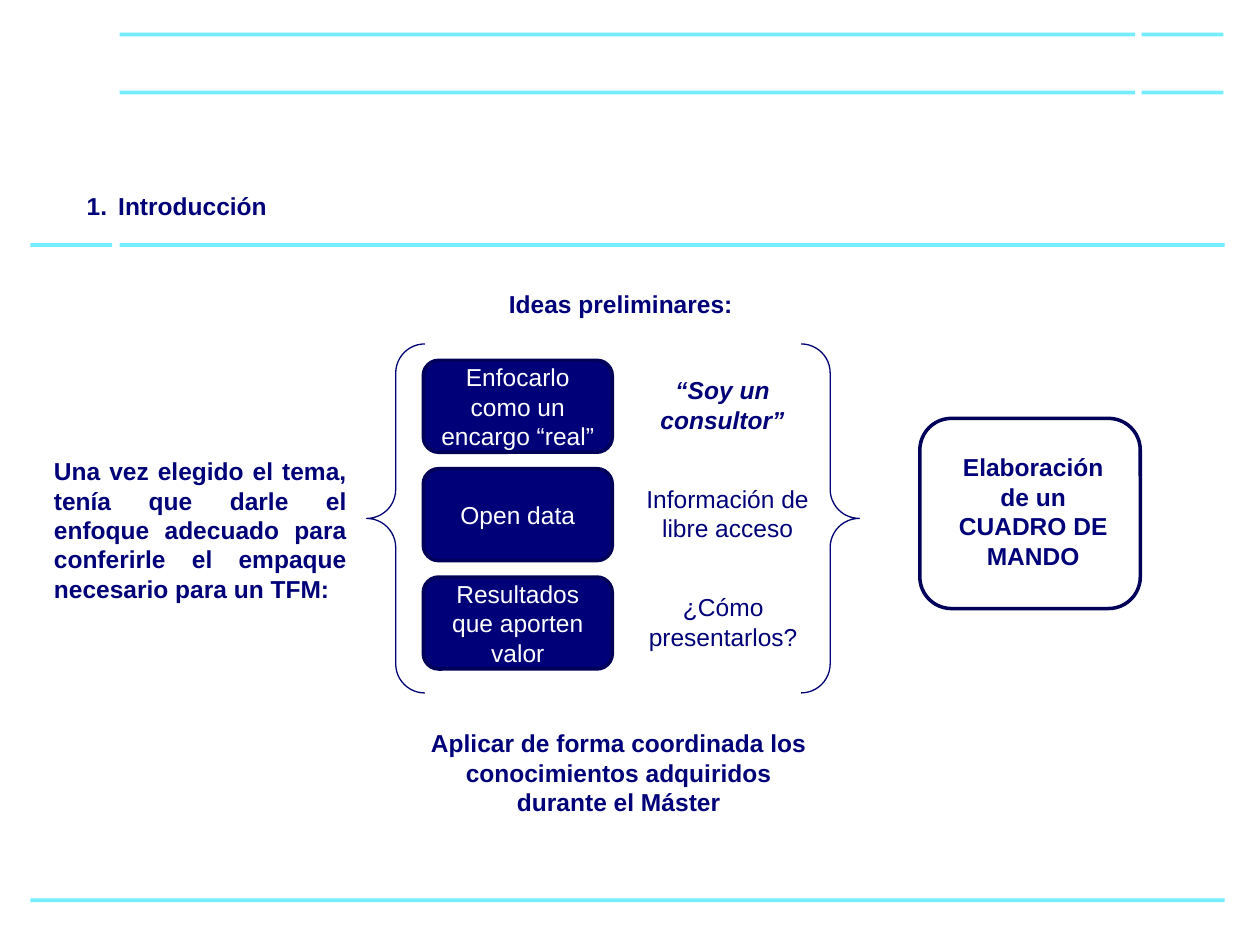
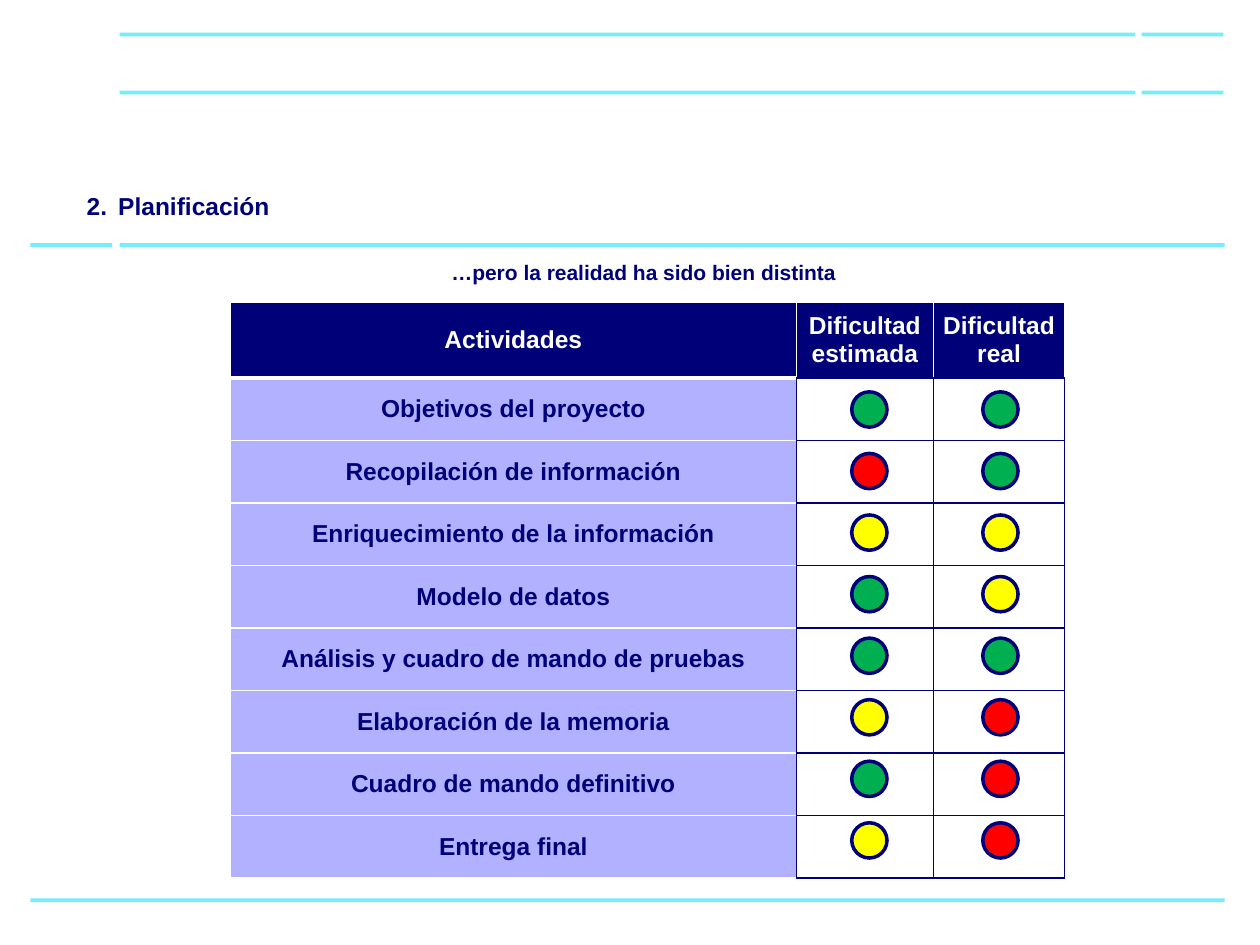
from typing import NamedTuple

from lxml import etree
from pptx import Presentation
from pptx.dml.color import RGBColor
from pptx.enum.shapes import MSO_SHAPE
from pptx.enum.text import MSO_ANCHOR, PP_ALIGN
from pptx.oxml.ns import qn
from pptx.util import Inches, Pt

RECTANGLE, ROUNDED = MSO_SHAPE.RECTANGLE, MSO_SHAPE.ROUNDED_RECTANGLE
BRACES, OVAL = MSO_SHAPE.DOUBLE_BRACE, MSO_SHAPE.OVAL
LEFT, CENTER, JUSTIFY = PP_ALIGN.LEFT, PP_ALIGN.CENTER, PP_ALIGN.JUSTIFY
TOP, MIDDLE = MSO_ANCHOR.TOP, MSO_ANCHOR.MIDDLE

FONT = "Arial"
COLORS = {
    "navy": "000078", "dark": "000059", "brace": "000075", "band": "73EDFF",
    "lavender": "B1B1FF", "white": "FFFFFF",
    "green": "00B050", "yellow": "FFFF00", "red": "FF0000",
}


class Box(NamedTuple):
    left: float
    top: float
    width: float
    height: float


class Idea(NamedTuple):
    name: str
    remark: str
    remark_left: float
    remark_width: float
    emphasis: bool = False


class Activity(NamedTuple):
    name: str
    estimated: str
    real: str


BANDS = [Box(left, top, width, 0.03)
         for left, width in ((0.95, 8.06), (9.06, 0.65)) for top in (0.26, 0.72)]
BANDS += [Box(0.24, 1.93, 0.65, 0.03), Box(0.95, 1.93, 8.77, 0.03),
          Box(0.24, 7.13, 9.48, 0.03)]

IDEAS = [
    Idea("Enfocarlo como un encargo “real”", "“Soy un consultor”", 5.05, 1.37, True),
    Idea("Open data", "Información de libre acceso", 4.89, 1.77),
    Idea("Resultados que aporten valor", "¿Cómo presentarlos?", 4.99, 1.5),
]

HEADERS = ["Actividades", "Dificultad\nestimada", "Dificultad\nreal"]
ACTIVITIES = [
    Activity("Objetivos del proyecto", "green", "green"),
    Activity("Recopilación de información", "red", "green"),
    Activity("Enriquecimiento de la información", "yellow", "yellow"),
    Activity("Modelo de datos", "green", "yellow"),
    Activity("Análisis y cuadro de mando de pruebas", "green", "green"),
    Activity("Elaboración de la memoria", "yellow", "red"),
    Activity("Cuadro de mando definitivo", "green", "red"),
    Activity("Entrega final", "yellow", "red"),
]


def rgb(name: str) -> RGBColor:
    return RGBColor.from_string(COLORS[name])


def inches(box: Box) -> list:
    return [Inches(value) for value in box]


def write_text(frame, text: str, *, size: float = 14, color: str = "navy",
               bold: bool = False, italic: bool = False, align=LEFT,
               anchor=TOP, indent: float = 0, number: int = 0) -> None:
    """Fill a text frame; a number above zero makes a numbered heading."""
    frame.word_wrap = True
    frame.vertical_anchor = anchor
    for index, line in enumerate(text.split("\n")):
        paragraph = frame.paragraphs[0] if index == 0 else frame.add_paragraph()
        paragraph.alignment = align
        properties = paragraph._p.get_or_add_pPr()
        if indent:
            properties.set("marL", str(Inches(indent)))
        if number:
            properties.set("indent", str(Inches(-0.25)))
            bullet_color = etree.SubElement(properties, qn("a:buClr"))
            etree.SubElement(bullet_color, qn("a:srgbClr"), val=COLORS[color])
            etree.SubElement(properties, qn("a:buAutoNum"),
                             type="arabicPeriod", startAt=str(number))
        run = paragraph.add_run()
        run.text = line
        font = run.font
        font.name, font.size, font.bold, font.italic = FONT, Pt(size), bold, italic
        font.color.rgb = rgb(color)


def add_text(slide, box: Box, text: str, **text_format) -> None:
    frame = slide.shapes.add_textbox(*inches(box)).text_frame
    frame.margin_left = frame.margin_right = Inches(0.1)
    frame.margin_top = frame.margin_bottom = Inches(0.1)
    write_text(frame, text, **text_format)


def add_shape(slide, kind, box: Box, *, fill: str = "", line: str = "",
              line_width: float = 2):
    shape = slide.shapes.add_shape(kind, *inches(box))
    shape.shadow.inherit = False
    if fill:
        shape.fill.solid()
        shape.fill.fore_color.rgb = rgb(fill)
    else:
        shape.fill.background()
    if line:
        shape.line.color.rgb = rgb(line)
        shape.line.width = Pt(line_width)
    else:
        shape.line.fill.background()
    return shape


def add_page(presentation, number: int, title: str):
    """Blank slide with the shared bands and numbered heading."""
    slide = presentation.slides.add_slide(presentation.slide_layouts[6])
    for band in BANDS:
        add_shape(slide, RECTANGLE, band, fill="band")
    add_text(slide, Box(0.34, 1.42, 3.47, 0.47), title, bold=True,
             indent=0.5, number=number)
    return slide


def style_cell(cell, fill: str, **borders: tuple[str, float]) -> None:
    """Set margins, borders (left, right, top, bottom) and fill of a cell."""
    cell.margin_left = cell.margin_right = Inches(0.05)
    cell.margin_top = cell.margin_bottom = Inches(0.01)
    cell.vertical_anchor = MIDDLE
    properties = cell._tc.get_or_add_tcPr()
    for side in ("left", "right", "top", "bottom"):
        color, width = borders[side]
        edge = etree.SubElement(properties, qn(f"a:ln{side[0].upper()}"), w=str(Pt(width)))
        solid = etree.SubElement(edge, qn("a:solidFill"))
        etree.SubElement(solid, qn("a:srgbClr"), val=COLORS[color])
    if fill:
        cell.fill.solid()
        cell.fill.fore_color.rgb = rgb(fill)
    else:
        cell.fill.background()


def build_introduction(presentation) -> None:
    slide = add_page(presentation, 1, "Introducción")
    add_text(slide, Box(0.08, 3.52, 2.77, 1.51),
             "Una vez elegido el tema, tenía que darle el enfoque adecuado para "
             "conferirle el empaque necesario para un TFM:",
             bold=True, align=JUSTIFY, indent=0.25)
    add_text(slide, Box(3.69, 2.19, 2.32, 0.57), "Ideas preliminares:",
             bold=True, align=JUSTIFY, indent=0.25)

    # Ideas with their remarks, between braces
    for index, idea in enumerate(IDEAS):
        top = 2.86 + 0.86 * index
        shape = add_shape(slide, ROUNDED, Box(3.36, top, 1.5, 0.73),
                          fill="navy", line="dark")
        write_text(shape.text_frame, idea.name, color="white", align=CENTER,
                   anchor=MIDDLE)
        add_text(slide, Box(idea.remark_left, top + 0.02, idea.remark_width, 0.68),
                 idea.remark, bold=idea.emphasis, italic=idea.emphasis, align=CENTER)
    add_shape(slide, BRACES, Box(2.91, 2.73, 3.91, 2.77), line="brace", line_width=0.75)

    # Outcome and conclusion
    add_shape(slide, ROUNDED, Box(7.3, 3.32, 1.75, 1.51), line="dark")
    add_text(slide, Box(7.17, 3.49, 1.81, 1.41), "Elaboración de un CUADRO DE MANDO",
             bold=True, align=CENTER, indent=0.25)
    add_text(slide, Box(3.04, 5.68, 3.49, 0.66),
             "Aplicar de forma coordinada los conocimientos adquiridos durante el Máster",
             bold=True, align=CENTER, indent=0.25)


def build_planning(presentation) -> None:
    slide = add_page(presentation, 2, "Planificación")
    add_text(slide, Box(2.01, 1.96, 5.95, 0.39),
             "…pero la realidad ha sido bien distinta",
             size=12, bold=True, align=CENTER, indent=0.25)

    # Table of activities
    table = slide.shapes.add_table(len(ACTIVITIES) + 1, len(HEADERS),
                                   *inches(Box(1.83, 2.4, 6.62, 4.57))).table
    for column, width in zip(table.columns, (4.49, 1.09, 1.04)):
        column.width = Inches(width)
    for index, row in enumerate(table.rows):
        row.height = Inches(3.97 / len(ACTIVITIES) if index else 0.6)
    white, navy = ("white", 1), ("navy", 1)
    for index, header in enumerate(HEADERS):
        cell = table.cell(0, index)
        style_cell(cell, "navy", left=white, right=white, top=white,
                   bottom=navy if index else ("white", 3))
        write_text(cell.text_frame, header, color="white", bold=True,
                   align=CENTER, anchor=MIDDLE)
    for row_index, activity in enumerate(ACTIVITIES, start=1):
        cell = table.cell(row_index, 0)
        style_cell(cell, "lavender", left=white, right=navy, bottom=white,
                   top=white if row_index > 1 else ("white", 3))
        write_text(cell.text_frame, activity.name, bold=True, align=CENTER,
                   anchor=MIDDLE)
        for column_index in (1, 2):
            style_cell(table.cell(row_index, column_index), "",
                       left=navy, right=navy, top=navy, bottom=navy)

    # Difficulty lights
    for index, activity in enumerate(ACTIVITIES):
        top = 3.11 + 3.42 * index / (len(ACTIVITIES) - 1)
        for left, color in ((6.76, activity.estimated), (7.8, activity.real)):
            add_shape(slide, OVAL, Box(left, top, 0.28, 0.28), fill=color, line="navy")


def main() -> None:
    presentation = Presentation()
    presentation.slide_width, presentation.slide_height = Inches(10), Inches(7.5)
    build_introduction(presentation)
    build_planning(presentation)
    presentation.save("out.pptx")


if __name__ == "__main__":
    main()
